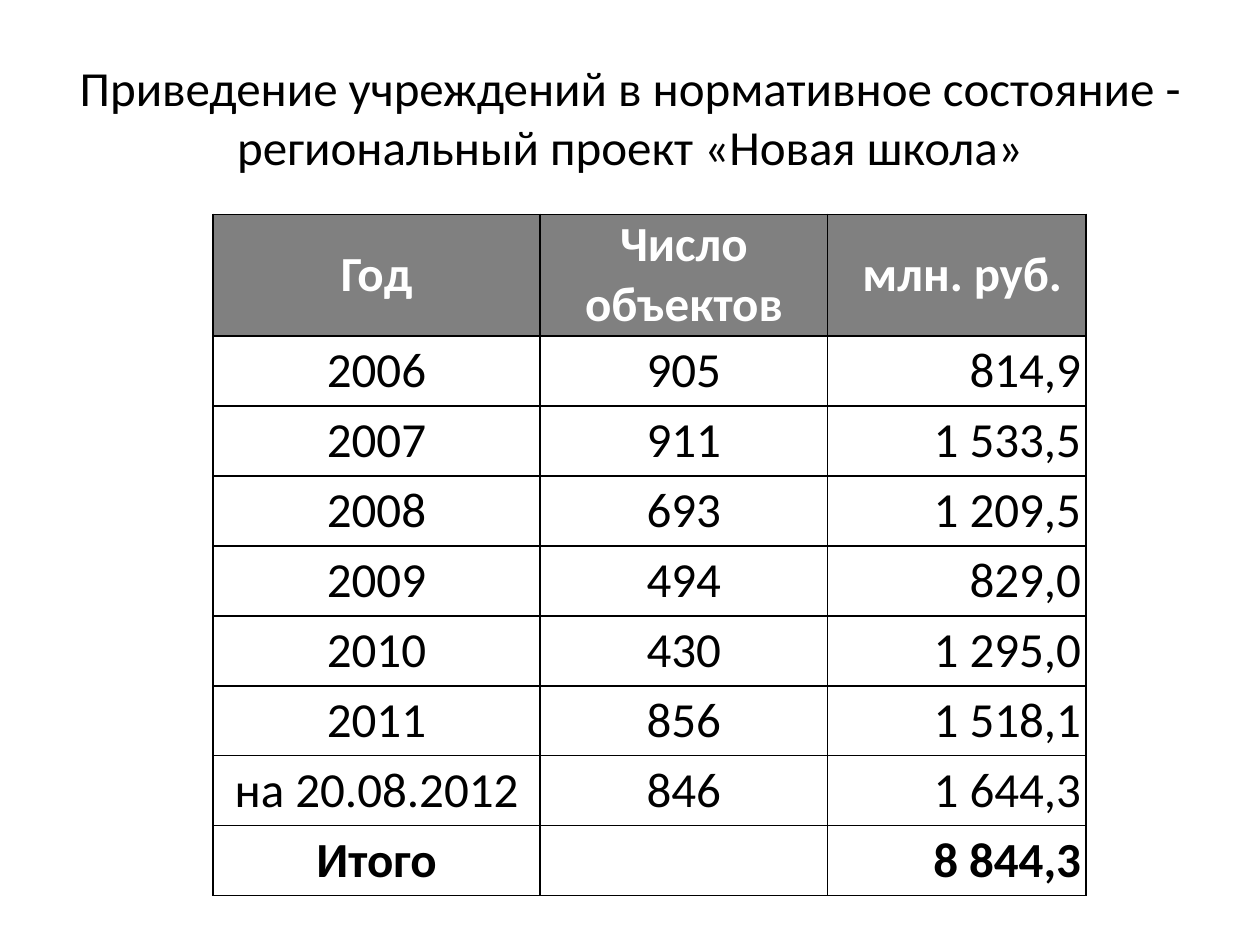
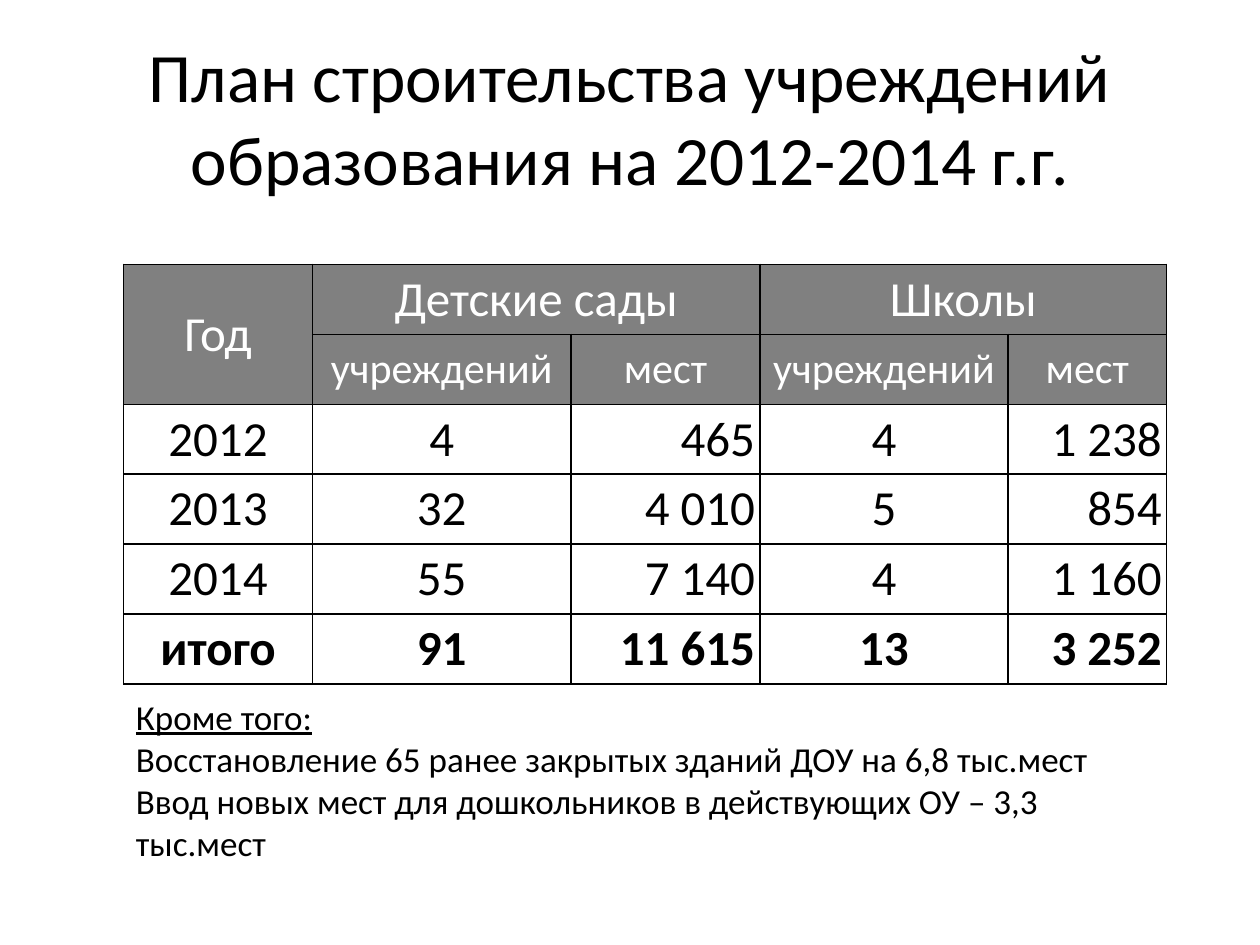
import dataclasses

import lxml.etree
import pptx
import pptx.dml.color
import pptx.enum.text
import pptx.oxml.ns
import pptx.util

Cm = pptx.util.Cm
Pt = pptx.util.Pt
Align = pptx.enum.text.PP_ALIGN
Anchor = pptx.enum.text.MSO_ANCHOR
AutoSize = pptx.enum.text.MSO_AUTO_SIZE


@dataclasses.dataclass(frozen=True)
class Theme:
    font: str = "Calibri"
    ink: str = "000000"
    header_ink: str = "FFFFFF"
    header_fill: str = "808080"
    title_size: float = 39.6
    table_size: float = 28
    subheader_size: float = 24
    note_size: float = 20
    border: float = 1
    cell_margin: float = 0.1
    row_height: float = 1.41


THEME = Theme()


def write_text(frame, *lines, size, color=THEME.ink, bold=False,
               align=Align.LEFT, underline_first=False):
    """Fill a text frame, one paragraph a line."""
    for index, line in enumerate(lines):
        para = frame.paragraphs[0] if index == 0 else frame.add_paragraph()
        para.alignment = align
        span = para.add_run()
        span.text = line
        span.font.name = THEME.font
        span.font.size = Pt(size)
        span.font.bold = bold
        span.font.underline = underline_first and index == 0
        span.font.color.rgb = pptx.dml.color.RGBColor.from_string(color)


def draw_borders(cell):
    """Put a thin line on all four sides of a cell."""
    qn = pptx.oxml.ns.qn
    properties = cell._tc.get_or_add_tcPr()
    for index, side in enumerate(("a:lnL", "a:lnR", "a:lnT", "a:lnB")):
        line = lxml.etree.Element(qn(side), w=str(int(Pt(THEME.border))))
        fill = lxml.etree.SubElement(line, qn("a:solidFill"))
        lxml.etree.SubElement(fill, qn("a:srgbClr"), val=THEME.ink)
        properties.insert(index, line)


class SlideBuilder:
    """Holds the style, the deck and the current slide."""

    def __init__(self, theme):
        self.theme = theme
        self.deck = pptx.Presentation()
        self.deck.slide_width = Cm(25.4)
        self.deck.slide_height = Cm(19.05)
        self.page = None

    def add_page(self, title, size):
        self.page = self.deck.slides.add_slide(self.deck.slide_layouts[5])
        box = self.page.shapes.title
        box.left, box.top, box.width, box.height = Cm(1.27), Cm(0.76), Cm(22.86), Cm(3.18)
        frame = box.text_frame
        frame.word_wrap = True
        frame.auto_size = AutoSize.NONE
        frame.vertical_anchor = Anchor.MIDDLE
        write_text(frame, title, size=size, align=Align.CENTER)

    def add_table(self, left, top, widths, heights, rows, aligns, header_sizes,
                  header_bold=False, header_margin=THEME.cell_margin,
                  body_anchor=Anchor.MIDDLE, merges=()):
        """Header rows come first, one for each header size; the last row is the total."""
        table = self.page.shapes.add_table(
            len(rows), len(widths), Cm(left), Cm(top),
            Cm(sum(widths)), Cm(sum(heights))).table
        table.first_row = table.horz_banding = False
        for column, width in zip(table.columns, widths):
            column.width = Cm(width)
        for row, height in zip(table.rows, heights):
            row.height = Cm(height)

        for r, values in enumerate(rows):
            is_header = r < len(header_sizes)
            is_total = r == len(rows) - 1
            margin = header_margin if is_header else self.theme.cell_margin
            for c, value in enumerate(values):
                cell = table.cell(r, c)
                cell.margin_left = cell.margin_right = Cm(margin)
                cell.margin_top = cell.margin_bottom = Cm(margin)
                cell.vertical_anchor = Anchor.MIDDLE if is_header else body_anchor
                if is_header:
                    cell.fill.solid()
                    cell.fill.fore_color.rgb = pptx.dml.color.RGBColor.from_string(
                        self.theme.header_fill)
                else:
                    cell.fill.background()
                draw_borders(cell)
                if value:
                    write_text(
                        cell.text_frame, value,
                        size=header_sizes[r] if is_header else self.theme.table_size,
                        color=self.theme.header_ink if is_header else self.theme.ink,
                        bold=header_bold if is_header else is_total,
                        align=Align.CENTER if is_header else aligns[c])

        for first, last in merges:
            table.cell(*first).merge(table.cell(*last))

    def add_note(self, left, top, width, height, *lines):
        box = self.page.shapes.add_textbox(Cm(left), Cm(top), Cm(width), Cm(height))
        box.text_frame.word_wrap = True
        box.text_frame.auto_size = AutoSize.SHAPE_TO_FIT_TEXT
        write_text(box.text_frame, *lines, size=self.theme.note_size,
                   underline_first=True)


builder = SlideBuilder(THEME)

# Slide 1: renovated schools by year
builder.add_page("Приведение учреждений в нормативное состояние - "
                 "региональный проект «Новая школа»", size=THEME.table_size)
renovation = [
    ("Год", "Число объектов", " млн. руб."),
    ("2006", "905", "814,9"),
    ("2007", "911", "1 533,5"),
    ("2008", "693", "1 209,5"),
    ("2009", "494", "829,0"),
    ("2010", "430", "1 295,0"),
    ("2011", "856", "1 518,1"),
    ("на 20.08.2012", "846", "1 644,3"),
    ("Итого", "", "8 844,3"),
]
builder.add_table(
    4.29, 4.32, widths=(6.6, 5.79, 5.21),
    heights=[2.44] + [THEME.row_height] * (len(renovation) - 1),
    rows=renovation, aligns=(Align.CENTER, Align.CENTER, Align.RIGHT),
    header_sizes=(THEME.table_size,), header_bold=True, header_margin=0.02)

# Slide 2: construction plan with a two-level header
builder.add_page("План строительства учреждений образования на 2012-2014 г.г.",
                 size=THEME.title_size)
construction = [
    ("Год", "Детские сады", "", "Школы", ""),
    ("", "учреждений", "мест", "учреждений", "мест"),
    ("2012", "4", "465", "4", "1 238"),
    ("2013", "32", "4 010", "5", "854"),
    ("2014", "55", "7 140", "4", "1 160"),
    ("итого", "91", "11 615", "13", "3 252"),
]
builder.add_table(
    2.49, 5.33, widths=(3.81, 5.21, 3.81, 5, 3.2),
    heights=[THEME.row_height] * len(construction), rows=construction,
    aligns=(Align.CENTER,) + (Align.CENTER, Align.RIGHT) * 2,
    header_sizes=(THEME.table_size, THEME.subheader_size),
    body_anchor=Anchor.BOTTOM,
    merges=(((0, 0), (1, 0)), ((0, 1), (0, 2)), ((0, 3), (0, 4))))
builder.add_note(
    2.49, 13.89, 21, 3.68,
    "Кроме того:",
    "Восстановление 65 ранее закрытых зданий ДОУ на 6,8 тыс.мест",
    "Ввод новых мест для дошкольников в действующих ОУ – 3,3 тыс.мест")

builder.deck.save("out.pptx")
